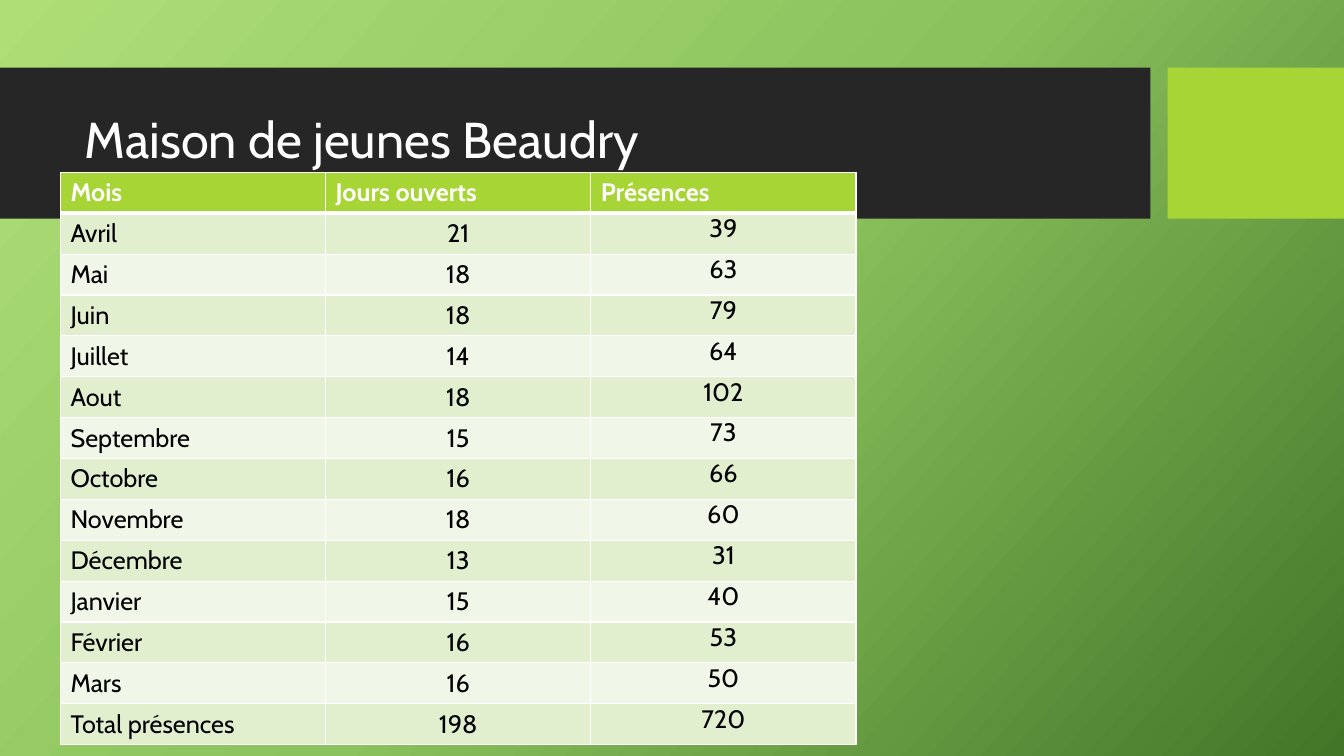
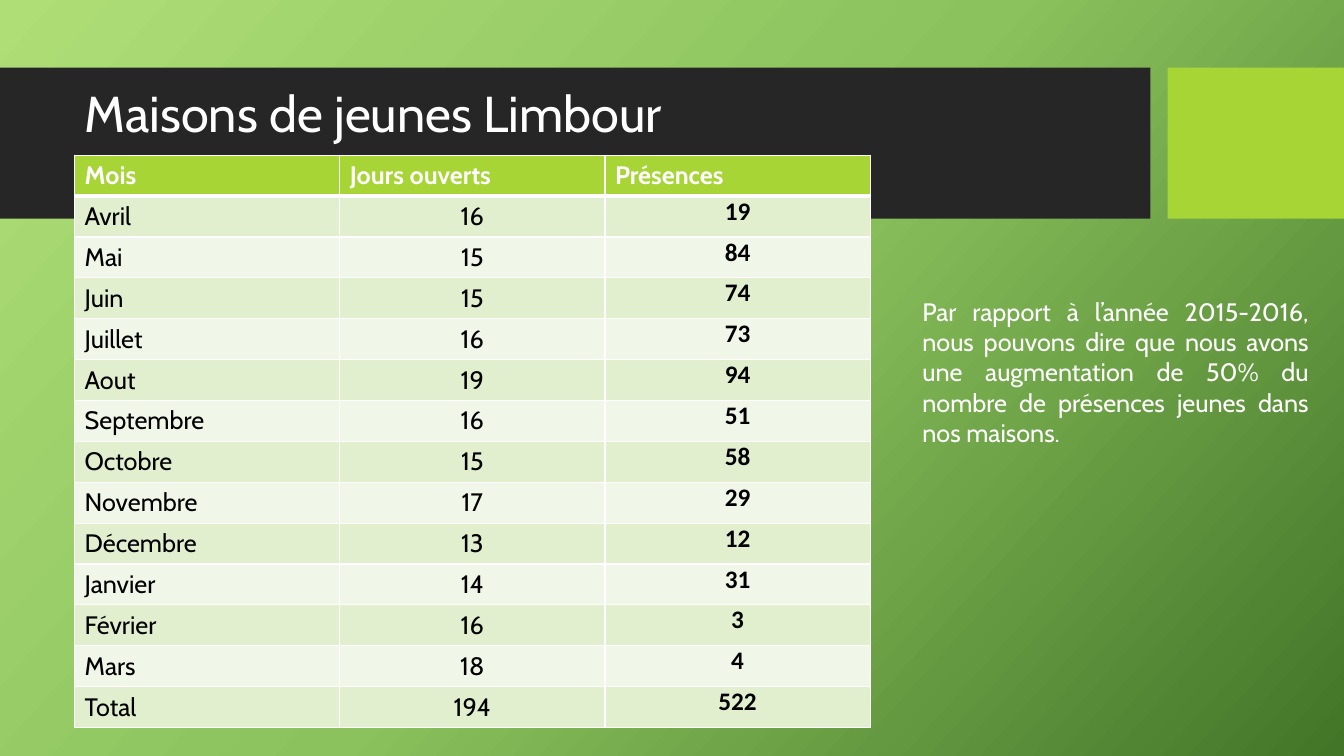
"""Build two slides of monthly attendance at youth centres."""
import copy

import lxml.etree
import pptx
import pptx.dml.color
import pptx.enum.shapes
import pptx.enum.text
import pptx.oxml.ns
import pptx.util

Inches = pptx.util.Inches
RGBColor = pptx.dml.color.RGBColor
ALIGN = pptx.enum.text.PP_ALIGN
ANCHOR = pptx.enum.text.MSO_ANCHOR
qn = pptx.oxml.ns.qn

WHITE = RGBColor(0xFF, 0xFF, 0xFF)
BLACK = RGBColor(0x00, 0x00, 0x00)
CHARCOAL = RGBColor(0x26, 0x26, 0x26)
LIME = RGBColor(0xA7, 0xD5, 0x35)
ROW_FILLS = [RGBColor(0xE1, 0xEF, 0xCE), RGBColor(0xF1, 0xF7, 0xE8)]
BACKDROP = [
    (0, RGBColor(0xAF, 0xDE, 0x77)),
    (0.5, RGBColor(0x8B, 0xC2, 0x5D)),
    (1, RGBColor(0x43, 0x75, 0x28)),
]

HEADINGS = ["Mois", "Jours ouverts", "Présences"]
MONTHS = ["Avril", "Mai", "Juin", "Juillet", "Aout", "Septembre", "Octobre",
          "Novembre", "Décembre", "Janvier", "Février", "Mars"]
CENTRES = [
    {
        "title": "Maison de jeunes Beaudry", "title_top": 0.82,
        "table_at": (0.6, 1.71), "total": "Total présences",
        "days": [21, 18, 18, 14, 18, 15, 16, 18, 13, 15, 16, 16, 198],
        "visits": [39, 63, 79, 64, 102, 73, 66, 60, 31, 40, 53, 50, 720],
        "visits_format": {},
        "remark": None,
    },
    {
        "title": "Maisons de jeunes Limbour", "title_top": 0.56,
        "table_at": (0.74, 1.54), "total": "Total",
        "days": [16, 15, 15, 16, 19, 16, 15, 17, 13, 14, 16, 18, 194],
        "visits": [19, 84, 74, 73, 94, 51, 58, 29, 12, 31, 3, 4, 522],
        "visits_format": {"font": "Calibri", "bold": True},
        "remark": "Par rapport à l’année 2015-2016, nous pouvons dire que nous "
                  "avons une augmentation de 50% du nombre de présences jeunes "
                  "dans nos maisons.",
    },
]


def write(frame, text, *, size=18, font="Cabin", color=WHITE, bold=False,
          align=ALIGN.LEFT, spacing=None):
    frame.text = text
    paragraph = frame.paragraphs[0]
    paragraph.alignment = align
    paragraph.line_spacing = spacing
    face = paragraph.runs[0].font
    face.size = pptx.util.Pt(size)
    face.name = font
    face.bold = bold
    face.color.rgb = color


def add_borders(cell, **widths):
    for side in ("L", "R", "T", "B"):
        line = lxml.etree.SubElement(cell._tc.get_or_add_tcPr(), qn("a:ln" + side))
        line.set("w", str(pptx.util.Pt(widths.get(side, 1))))
        paint = lxml.etree.SubElement(line, qn("a:solidFill"))
        lxml.etree.SubElement(paint, qn("a:srgbClr")).set("val", str(WHITE))


prs = pptx.Presentation()
prs.slide_width = Inches(13.33)
prs.slide_height = Inches(7.5)
layout = prs.slide_layouts[5]

backdrop = prs.slide_master.background.fill
backdrop.gradient()
backdrop.gradient_angle = 360 - 42
stop_list = backdrop._fill._gradFill.find(qn("a:gsLst"))
stop_list.insert(1, copy.deepcopy(stop_list[0]))
for stop, (position, color) in zip(backdrop.gradient_stops, BACKDROP):
    stop.position = position
    stop.color.rgb = color

slides = [prs.slides.add_slide(layout) for _ in CENTRES]

bands = [(0, 11.41, CHARCOAL), (11.58, 1.75, LIME)]
for order, (left, width, color) in enumerate(bands):
    band = slides[0].shapes.add_shape(
        pptx.enum.shapes.MSO_SHAPE.RECTANGLE,
        Inches(left), Inches(0.67), Inches(width), Inches(1.5))
    band.shadow.inherit = False
    band.fill.solid()
    band.fill.fore_color.rgb = color
    band.line.fill.background()
    layout.shapes._spTree.insert(2 + order, band._element)

for slide, centre in zip(slides, CENTRES):
    title = slide.shapes.title
    title.left, title.top = Inches(0.74), Inches(centre["title_top"])
    title.width, title.height = Inches(10.51), Inches(1.18)
    title.text_frame.vertical_anchor = ANCHOR.MIDDLE
    write(title.text_frame, centre["title"], size=36, spacing=0.9)

    left, top = centre["table_at"]
    attendance = slide.shapes.add_table(
        len(MONTHS) + 2, len(HEADINGS),
        Inches(left), Inches(top), Inches(7.89), Inches(5.68)).table

    for cell, heading in zip(attendance.rows[0].cells, HEADINGS):
        add_borders(cell, B=3)
        cell.fill.solid()
        cell.fill.fore_color.rgb = LIME
        write(cell.text_frame, heading, bold=True)

    records = zip(MONTHS + [centre["total"]], centre["days"], centre["visits"])
    formats = [{}, {"align": ALIGN.CENTER},
               {"align": ALIGN.CENTER, **centre["visits_format"]}]
    for row, record in enumerate(records, start=1):
        for column, value in enumerate(record):
            cell = attendance.cell(row, column)
            add_borders(cell, T=3 if row == 1 else 1)
            cell.fill.solid()
            cell.fill.fore_color.rgb = ROW_FILLS[(row - 1) % 2]
            write(cell.text_frame, str(value), color=BLACK, **formats[column])
        cell.margin_left = cell.margin_right = Inches(0.07)
        cell.margin_top = cell.margin_bottom = 0

    if centre["remark"]:
        remark = slide.shapes.add_textbox(
            Inches(9.05), Inches(2.89), Inches(4.03), Inches(1.62)).text_frame
        remark.word_wrap = True
        remark.auto_size = pptx.enum.text.MSO_AUTO_SIZE.SHAPE_TO_FIT_TEXT
        write(remark, centre["remark"], align=ALIGN.JUSTIFY)

prs.save("out.pptx")
